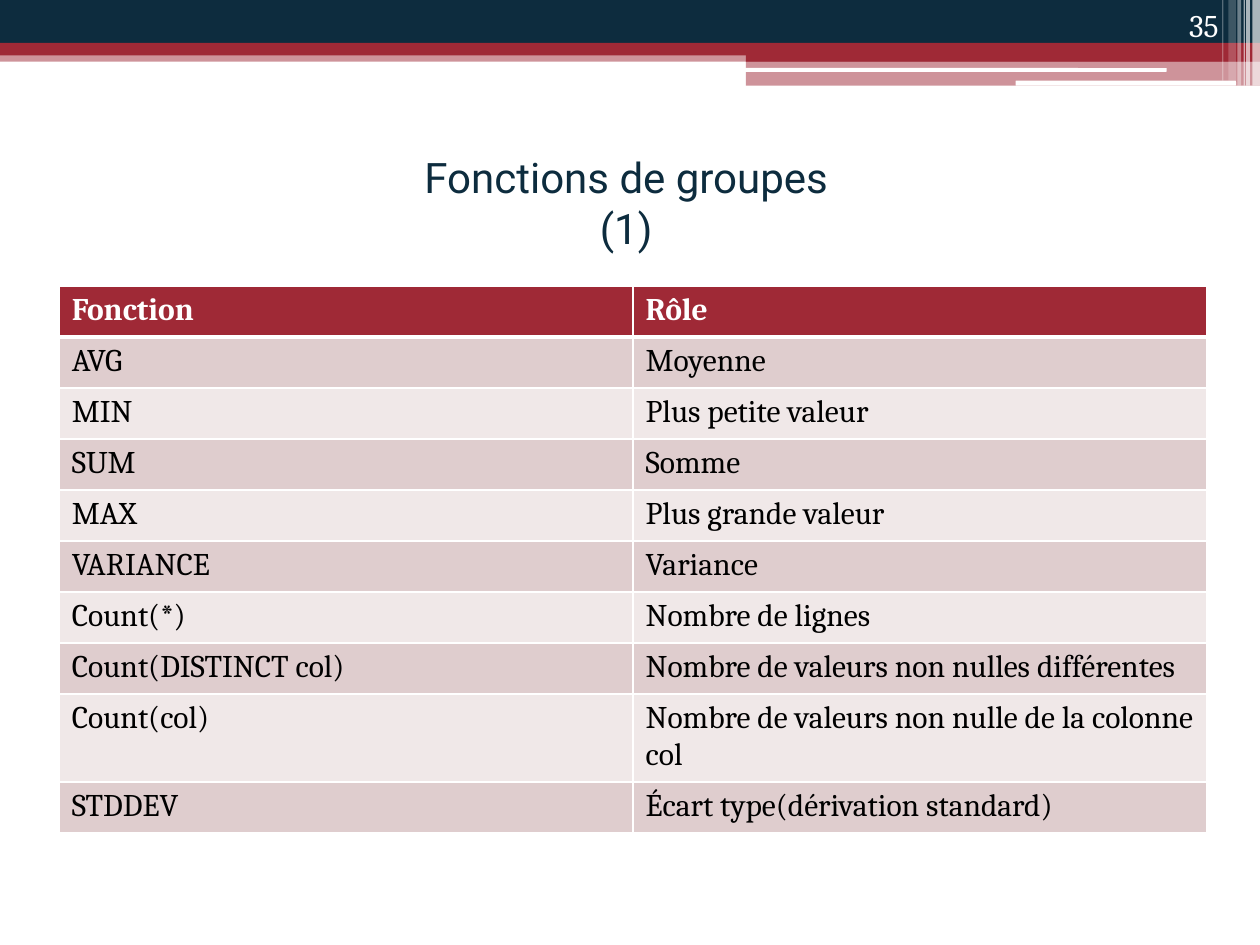
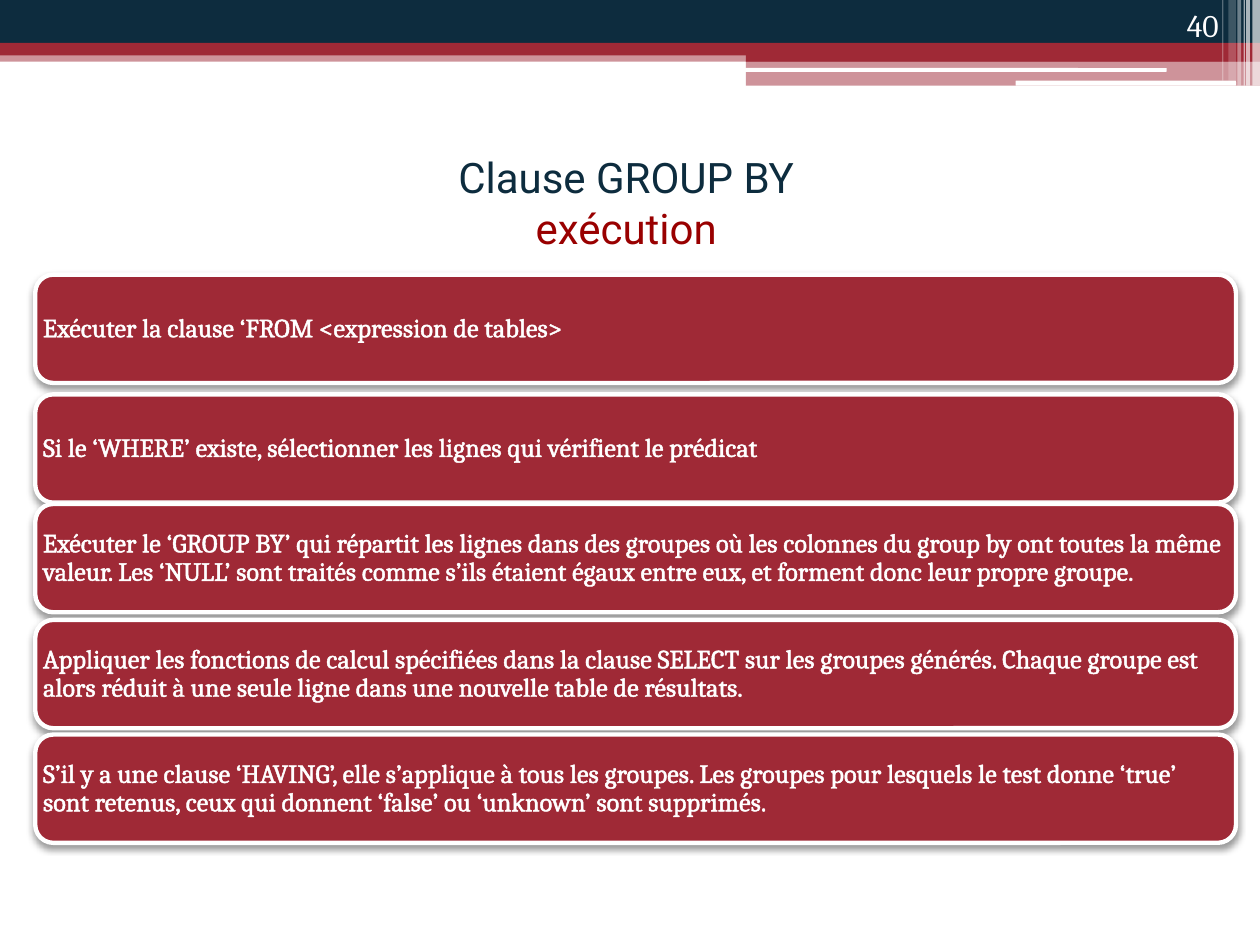
import pptx
import pptx.dml.color
import pptx.enum.shapes
import pptx.enum.text
import pptx.oxml
import pptx.oxml.ns
import pptx.util
import lxml.etree

Inches = pptx.util.Inches
Pt = pptx.util.Pt
Align = pptx.enum.text.PP_ALIGN
Anchor = pptx.enum.text.MSO_ANCHOR
Preset = pptx.enum.shapes.MSO_SHAPE
qn = pptx.oxml.ns.qn

NAVY, RED, WHITE, BLACK = "0D2C3E", "9F2936", "FFFFFF", "000000"
DARK_RED, ROSE, PALE_ROSE = "990000", "DFCDCE", "F0E8E8"
BODY_FONT, TITLE_FONT = "Cambria", "Roboto"

BANDS = [
    (0, 0.4, 10, 0.09, RED, 50),
    (0, 0, 10, 0.34, NAVY, 100),
    (0, 0.34, 10, 0.1, RED, 100),
    (5.92, 0.39, 4.08, 0.1, RED, 100),
    (5.92, 0.48, 4.08, 0.2, RED, 50),
]
ROUNDED_BARS = [(5.91, 0.54, 3.35, 0.03), (8.06, 0.64, 1.75, 0.04)]
STRIPES = [
    (9.94, 0.06, 0.68, 65),
    (9.89, 0.03, 0.68, 65),
    (9.87, 0.01, 0.68, 60),
    (9.82, 0.03, 0.68, 40),
    (9.75, 0.06, 0.64, 20),
    (9.7, 0.01, 0.64, 30),
]

FUNCTIONS = [
    ("Fonction", "Rôle"),
    ("AVG", "Moyenne"),
    ("MIN", "Plus petite valeur"),
    ("SUM", "Somme"),
    ("MAX", "Plus grande valeur"),
    ("VARIANCE", "Variance"),
    ("Count(*)", "Nombre de lignes"),
    ("Count(DISTINCT col)", "Nombre de valeurs non nulles différentes"),
    ("Count(col)", "Nombre de valeurs non nulle de la colonne col"),
    ("STDDEV", "Écart type(dérivation standard)"),
]

STEPS = [
    (2.18, "Exécuter la clause ‘FROM <expression de tables>"),
    (3.13, "Si le ‘WHERE’ existe, sélectionner les lignes qui vérifient le prédicat"),
    (4, "Exécuter le ‘GROUP BY’ qui répartit les lignes dans des groupes où les "
        "colonnes du group by ont toutes la même valeur. Les ‘NULL’ sont traités "
        "comme s’ils étaient égaux entre eux, et forment donc leur propre groupe."),
    (4.92, "Appliquer les fonctions de calcul spécifiées dans la clause SELECT sur "
           "les groupes générés. Chaque groupe est alors réduit à une seule ligne "
           "dans une nouvelle table de résultats."),
    (5.83, "S’il y a une clause ‘HAVING’, elle s’applique à tous les groupes. Les "
           "groupes pour lesquels le test donne ‘true’ sont retenus, ceux qui "
           "donnent ‘false’ ou ‘unknown’ sont supprimés."),
]


def paint(color, value):
    color.rgb = pptx.dml.color.RGBColor.from_string(value)


def set_font(font, name, size, color, bold=False):
    font.name, font.size, font.bold = name, Pt(size), bold
    paint(font.color, color)


def solid_line(parent, tag, width, color):
    line = lxml.etree.SubElement(parent, qn(tag), w=str(Pt(width)))
    fill = lxml.etree.SubElement(line, qn("a:solidFill"))
    lxml.etree.SubElement(fill, qn("a:srgbClr"), val=color)
    return line


def add_block(page, left, top, width, height, color, opacity=100,
              preset=Preset.RECTANGLE):
    block = page.shapes.add_shape(
        preset, Inches(left), Inches(top), Inches(width), Inches(height))
    block.shadow.inherit = False
    block.fill.solid()
    paint(block.fill.fore_color, color)
    block.line.fill.background()
    if opacity < 100:
        tint = block.fill._xPr.find(".//" + qn("a:srgbClr"))
        lxml.etree.SubElement(tint, qn("a:alpha"), val=str(opacity * 1000))
    return block


def add_text_box(page, left, top, width, height, anchor, align):
    box = page.shapes.add_textbox(
        Inches(left), Inches(top), Inches(width), Inches(height))
    frame = box.text_frame
    frame.word_wrap = True
    frame.vertical_anchor = anchor
    para = frame.paragraphs[0]
    para.alignment = align
    return para


def add_title(page, first, second, second_color):
    para = add_text_box(page, 0.47, 1.02, 9, 1.17, Anchor.MIDDLE, Align.CENTER)
    set_font(para.font, TITLE_FONT, 24, NAVY)
    for text, color in ((first, NAVY), (second, second_color)):
        if para.runs:
            para.add_line_break()
        span = para.add_run()
        span.text = text
        set_font(span.font, TITLE_FONT, 24, color)


def add_page_number(page, number):
    para = add_text_box(page, 8.94, 0, 0.83, 0.4, Anchor.BOTTOM, Align.RIGHT)
    para.text = str(number)
    set_font(para.font, BODY_FONT, 18, WHITE)


def add_page(deck, number, first, second, second_color=NAVY):
    page = deck.slides.add_slide(deck.slide_layouts[6])
    for band in BANDS:
        add_block(page, *band)
    for bar in ROUNDED_BARS:
        add_block(page, *bar, WHITE, preset=Preset.ROUNDED_RECTANGLE)
    for left, width, height, opacity in STRIPES:
        add_block(page, left, 0, width, height, WHITE, opacity)
    add_title(page, first, second, second_color)
    add_page_number(page, number)
    return page


def style_cell(cell, text, is_header, fill):
    para = cell.text_frame.paragraphs[0]
    para.text = text
    set_font(para.font, BODY_FONT, 18, WHITE if is_header else BLACK, is_header)
    properties = cell._tc.get_or_add_tcPr()
    for tag in ("a:lnL", "a:lnR", "a:lnT", "a:lnB"):
        solid_line(properties, tag, 3 if is_header and tag == "a:lnB" else 1, WHITE)
    cell.fill.solid()
    paint(cell.fill.fore_color, fill)


def add_function_table(page):
    table = page.shapes.add_table(
        len(FUNCTIONS), 2, Inches(0.47), Inches(2.27), Inches(9.11), Inches(4.05)).table
    table.horz_banding = False
    for row, texts in enumerate(FUNCTIONS):
        fill = RED if row == 0 else ROSE if row % 2 else PALE_ROSE
        for column, text in enumerate(texts):
            style_cell(table.cell(row, column), text, row == 0, fill)


def add_drop_shadow(shape):
    effects = shape._element.spPr.find(qn("a:effectLst"))
    shadow = lxml.etree.SubElement(
        effects, qn("a:outerShdw"), blurRad=str(Pt(4.1)), dist=str(Pt(2)),
        dir="5400000", rotWithShape="0")
    color = lxml.etree.SubElement(shadow, qn("a:srgbClr"), val=BLACK)
    lxml.etree.SubElement(color, qn("a:alpha"), val="40000")


def add_step(page, top, text):
    step = add_block(page, 0.28, top, 9.53, 0.86, RED,
                     preset=Preset.ROUNDED_RECTANGLE)
    paint(step.line.color, WHITE)
    step.line.width = Pt(2.5)
    add_drop_shadow(step)
    frame = step.text_frame
    frame.word_wrap = True
    frame.vertical_anchor = Anchor.MIDDLE
    frame.margin_left = frame.margin_right = Inches(0.02)
    frame.margin_top = frame.margin_bottom = Inches(0.02)
    para = frame.paragraphs[0]
    para.text = text
    para.alignment = Align.LEFT
    para.line_spacing = 0.9
    set_font(para.font, BODY_FONT, 15, WHITE)
    solid_line(para.runs[0]._r.get_or_add_rPr(), "a:ln", 1.45, WHITE)
    paint(para.runs[0].font.color, WHITE)


def main():
    deck = pptx.Presentation()
    deck.slide_width, deck.slide_height = Inches(10), Inches(7.5)
    add_function_table(add_page(deck, 35, "Fonctions de groupes", "(1)"))
    page = add_page(deck, 40, "Clause GROUP BY", "exécution", DARK_RED)
    for top, text in STEPS:
        add_step(page, top, text)
    deck.save("out.pptx")


if __name__ == "__main__":
    main()
